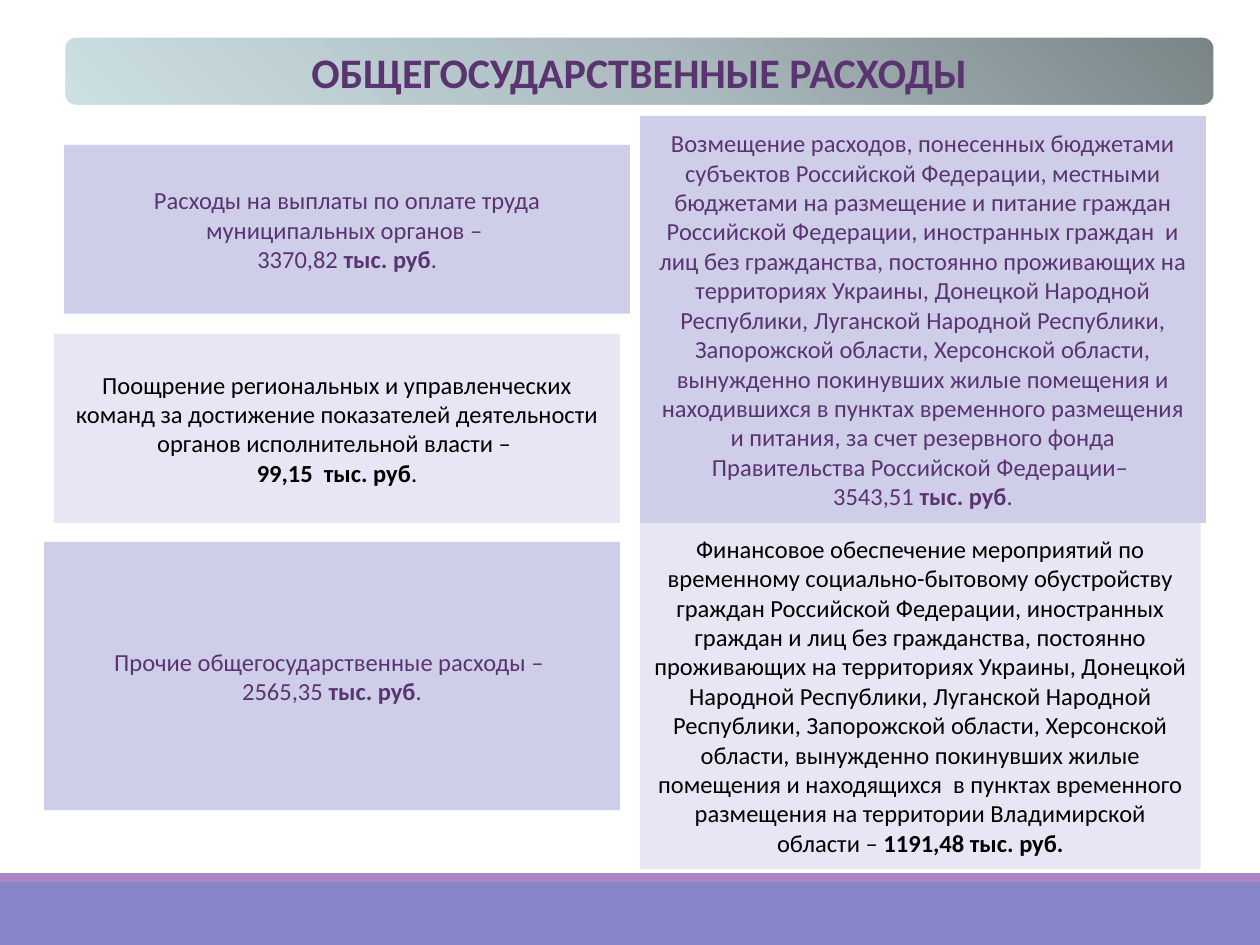
from copy import deepcopy
from dataclasses import dataclass

from pptx import Presentation
from pptx.dml.color import RGBColor
from pptx.enum.shapes import MSO_SHAPE
from pptx.enum.text import MSO_ANCHOR, PP_ALIGN
from pptx.util import Inches, Pt

COLORS = {
    "purple_text": "5A3471",
    "black": "000000",
    "white": "FFFFFF",
    "lilac": "CFCEE9",
    "pale_lilac": "E7E6F4",
    "footer": "8784C7",
    "footer_stripe": "AD84C6",
    "title_dark": "798487",
    "title_middle": "ACBCC0",
    "title_light": "CCDFE3",
}


@dataclass
class TextRun:
    text: str
    bold: bool = False


@dataclass
class Box:
    left: float
    top: float
    width: float
    height: float
    fill: str
    text_color: str = "black"
    paragraphs: tuple[tuple[TextRun, ...], ...] = ()
    size: float = 14
    kind: MSO_SHAPE = MSO_SHAPE.RECTANGLE


def color(name: str) -> RGBColor:
    return RGBColor.from_string(COLORS[name])


def draw_box(slide, box: Box):
    """Draw a borderless box with centred text."""
    position = (Inches(n) for n in (box.left, box.top, box.width, box.height))
    shape = slide.shapes.add_shape(box.kind, *position)
    shape.shadow.inherit = False
    shape.fill.solid()
    shape.fill.fore_color.rgb = color(box.fill)
    shape.line.fill.background()

    frame = shape.text_frame
    frame.word_wrap = True
    frame.vertical_anchor = MSO_ANCHOR.MIDDLE
    for index, text_runs in enumerate(box.paragraphs):
        paragraph = frame.add_paragraph() if index else frame.paragraphs[0]
        paragraph.alignment = PP_ALIGN.CENTER
        for text_run in text_runs:
            run = paragraph.add_run()
            run.text = text_run.text
            font_format = {"name": "Calibri", "size": Pt(box.size), "bold": text_run.bold}
            for attribute, value in font_format.items():
                setattr(run.font, attribute, value)
            run.font.color.rgb = color(box.text_color)
    return shape


def apply_title_gradient(shape) -> None:
    """Fade from dark at the top right to light at the bottom left."""
    fill = shape.fill
    fill.gradient()
    fill.gradient_angle = 225
    stop_list = fill._fill._gradFill.gsLst
    stop_list.insert(1, deepcopy(stop_list[0]))
    names = ("title_dark", "title_middle", "title_light")
    for stop, name, place in zip(fill.gradient_stops, names, (0, 0.5, 1)):
        stop.color.rgb = color(name)
        stop.position = place


def expense(description: str, amount: str, bold_amount: bool = False):
    """Give the description and, on its own line, the amount."""
    return (
        (TextRun(description),),
        (TextRun(amount, bold_amount), TextRun("тыс. руб", True), TextRun(".")),
    )


FOOTER = (
    Box(0, 7, 10, 0.5, "footer"),
    Box(0, 6.93, 10, 0.07, "footer_stripe"),
)

TITLE = Box(
    0.51, 0.29, 9.13, 0.55, "title_middle", "purple_text",
    ((TextRun("ОБЩЕГОСУДАРСТВЕННЫЕ РАСХОДЫ", True),),),
    24, MSO_SHAPE.ROUNDED_RECTANGLE,
)

EXPENSES = (
    Box(0.51, 1.15, 4.49, 1.34, "lilac", "purple_text", expense(
        "Расходы на выплаты по оплате труда муниципальных органов – ",
        "3370,82 ")),
    Box(0.43, 2.65, 4.49, 1.5, "pale_lilac", "black", expense(
        "Поощрение региональных и управленческих команд за достижение "
        "показателей деятельности органов исполнительной власти – ",
        "99,15  ", bold_amount=True)),
    Box(5.08, 4.14, 4.45, 2.76, "pale_lilac", "black", ((
        TextRun(
            "Финансовое обеспечение мероприятий по временному "
            "социально-бытовому обустройству граждан Российской Федерации, "
            "иностранных граждан и лиц без гражданства, постоянно "
            "проживающих на территориях Украины, Донецкой Народной "
            "Республики, Луганской Народной Республики, Запорожской области, "
            "Херсонской области, вынужденно покинувших жилые помещения и "
            "находящихся  в пунктах временного размещения на территории "
            "Владимирской области – "),
        TextRun("1191,48 тыс. руб.", True)),)),
    Box(5.08, 0.92, 4.49, 3.23, "lilac", "purple_text", expense(
        "Возмещение расходов, понесенных бюджетами субъектов Российской "
        "Федерации, местными бюджетами на размещение и питание граждан "
        "Российской Федерации, иностранных граждан  и лиц без гражданства, "
        "постоянно проживающих на территориях Украины, Донецкой Народной "
        "Республики, Луганской Народной Республики, Запорожской области, "
        "Херсонской области, вынужденно покинувших жилые помещения и "
        "находившихся в пунктах временного размещения и питания, за счет "
        "резервного фонда Правительства Российской Федерации– ",
        "3543,51 ")),
    Box(0.35, 4.3, 4.57, 2.13, "lilac", "purple_text", expense(
        "Прочие общегосударственные расходы – ", "2565,35 ")),
)


def main() -> None:
    presentation = Presentation()
    presentation.slide_width = Inches(10)
    presentation.slide_height = Inches(7.5)
    slide = presentation.slides.add_slide(presentation.slide_layouts[6])

    # Footer bands
    for band in FOOTER:
        draw_box(slide, band)

    # Title banner
    banner = draw_box(slide, TITLE)
    apply_title_gradient(banner)
    banner.line.color.rgb = color("white")
    banner.line.width = Pt(1.25)

    # Expense boxes
    for box in EXPENSES:
        draw_box(slide, box)

    presentation.save("out.pptx")


if __name__ == "__main__":
    main()
